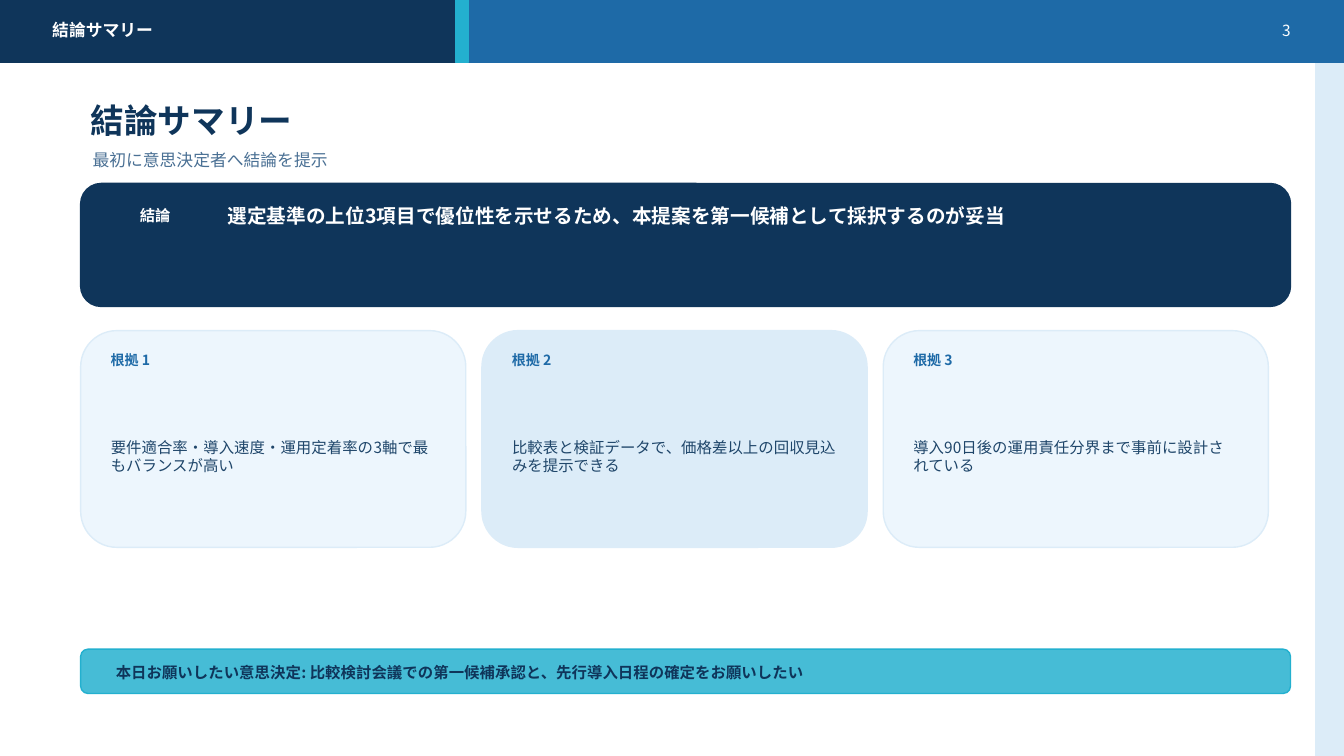
import pptx
import pptx.util
import pptx.dml.color
import pptx.enum.shapes
import pptx.enum.text
import pptx.oxml.ns
import lxml.etree

PX = 9144
FONT = "Noto Sans CJK JP"
COLORS = {
    "white": "FFFFFF",
    "navy": "0F355A",
    "blue": "1E6AA7",
    "cyan": "23B0CF",
    "pale": "DCECF8",
    "mist": "EDF6FD",
    "slate": "4A7094",
    "ink": "1F466A",
}
REASONS = [
    "要件適合率・導入速度・運用定着率の3軸で最もバランスが高い",
    "比較表と検証データで、価格差以上の回収見込みを提示できる",
    "導入90日後の運用責任分界まで事前に設計されている",
]
SHAPE = pptx.enum.shapes.MSO_SHAPE
ALIGN = pptx.enum.text.PP_ALIGN


def rgb(name):
    return pptx.dml.color.RGBColor.from_string(COLORS[name])


def emu(*lengths):
    return [pptx.util.Emu(n * PX) for n in lengths]


def write(sp, text, size=11, color="white", bold=False, align=ALIGN.LEFT):
    tf = sp.text_frame
    tf.word_wrap = True
    tf.auto_size = pptx.enum.text.MSO_AUTO_SIZE.NONE
    tf.vertical_anchor = pptx.enum.text.MSO_ANCHOR.MIDDLE
    tf.margin_top = tf.margin_bottom = 0
    p = tf.paragraphs[0]
    p.alignment = align
    r = p.add_run()
    r.text = text
    r.font.size = pptx.util.Pt(size)
    r.font.bold = bold
    r.font.color.rgb = rgb(color)
    r.font.name = FONT
    ea = lxml.etree.SubElement(r.font._element, pptx.oxml.ns.qn("a:ea"))
    ea.set("typeface", FONT)


def add_label(s, box, text, **fmt):
    write(s.shapes.add_textbox(*emu(*box)), text, **fmt)


def add_title(s, box, text, **fmt):
    sp = s.shapes.title
    sp.left, sp.top, sp.width, sp.height = emu(*box)
    write(sp, text, **fmt)


def add_panel(s, box, fill, line=None, kind=SHAPE.RECTANGLE, alpha=None):
    sp = s.shapes.add_shape(kind, *emu(*box))
    sp.shadow.inherit = False
    sp.fill.solid()
    sp.fill.fore_color.rgb = rgb(fill)
    sp.line.color.rgb = rgb(line or fill)
    sp.line.width = pptx.util.Pt(1)
    if alpha:
        color = sp._element.spPr.find(".//" + pptx.oxml.ns.qn("a:srgbClr"))
        lxml.etree.SubElement(color, pptx.oxml.ns.qn("a:alpha")).set("val", str(alpha * 1000))


def add_header(s):
    add_panel(s, (1305, 55, 28, 695), "pale")
    add_panel(s, (0, 0, 1333, 62), "blue")
    add_panel(s, (0, 0, 460, 62), "navy")
    add_panel(s, (452, 0, 12, 62), "cyan")
    add_label(s, (42, 17, 880, 26), "結論サマリー", size=12, bold=True)
    add_label(s, (1215, 17, 75, 26), "3", align=ALIGN.RIGHT)


def add_conclusion(s):
    add_panel(s, (80, 182, 1200, 122), "navy", kind=SHAPE.ROUNDED_RECTANGLE)
    add_label(s, (104, 202, 100, 24), "結論", bold=True, align=ALIGN.CENTER)
    add_label(s, (216, 198, 1040, 32),
              "選定基準の上位3項目で優位性を示せるため、本提案を第一候補として採択するのが妥当",
              size=14, bold=True)


def add_reason(s, index, text):
    left = 80 + 398 * index
    fill = "pale" if index % 2 else "mist"
    add_panel(s, (left, 328, 382, 215), fill, "pale", SHAPE.ROUNDED_RECTANGLE)
    add_label(s, (left + 20, 346, 90, 22), f"根拠 {index + 1}", size=10, color="blue", bold=True)
    add_label(s, (left + 20, 378, 342, 150), text, color="ink")


def add_decision(s):
    add_panel(s, (80, 644, 1200, 44), "cyan", kind=SHAPE.ROUNDED_RECTANGLE, alpha=84)
    add_label(s, (105, 656, 1150, 22),
              "本日お願いしたい意思決定: 比較検討会議での第一候補承認と、先行導入日程の確定をお願いしたい",
              color="navy", bold=True)


def main():
    prs = pptx.Presentation()
    prs.slide_width, prs.slide_height = emu(1333, 750)
    s = prs.slides.add_slide(prs.slide_layouts[5])
    add_header(s)
    add_title(s, (80, 95, 1140, 48), "結論サマリー", size=24, color="navy", bold=True)
    add_label(s, (82, 144, 1120, 30), "最初に意思決定者へ結論を提示", size=12, color="slate")
    add_conclusion(s)
    for index, text in enumerate(REASONS):
        add_reason(s, index, text)
    add_decision(s)
    prs.save("out.pptx")


if __name__ == "__main__":
    main()
